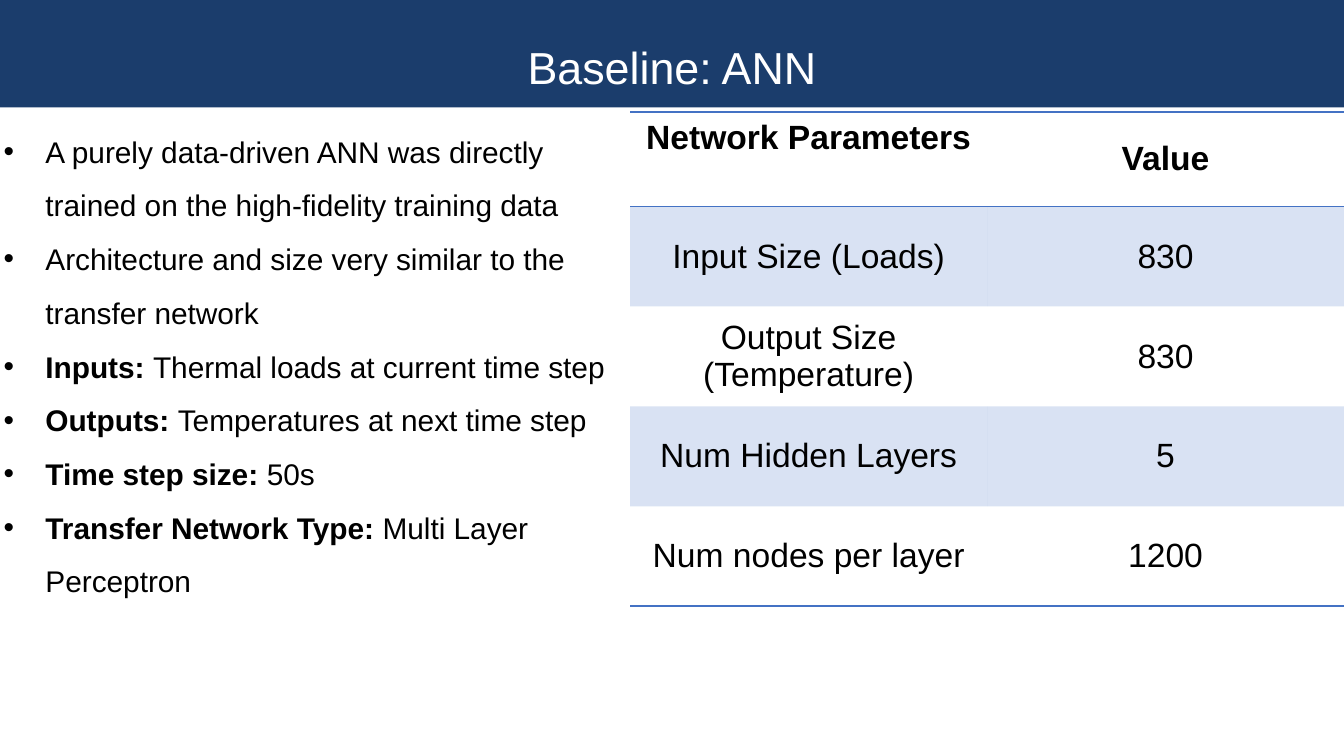
from dataclasses import dataclass
from lxml.etree import SubElement
from pptx import Presentation
from pptx.dml.color import RGBColor as Rgb
from pptx.enum.shapes import MSO_SHAPE as Shape
from pptx.enum.text import MSO_ANCHOR as Anchor, PP_ALIGN as Align
from pptx.oxml.ns import qn
from pptx.util import Cm, Pt


@dataclass(frozen=True)
class Theme:
    face: str = "Arial"
    navy: str = "1B3D6C"
    blue: str = "4472C4"
    white: str = "FFFFFF"
    black: str = "000000"
    head: int = 24
    cell: int = 18
    body: int = 16
    tint: int = 20


THEME = Theme()
NO_STYLE = "{2D5ABB26-0587-4C30-8999-92F81FD0307C}"

POINTS = [
    ("", "A purely data-driven ANN was directly trained on the high-fidelity training data"),
    ("", "Architecture and size very similar to the transfer network"),
    ("Inputs: ", "Thermal loads at current time step"),
    ("Outputs: ", "Temperatures at next time step"),
    ("Time step size: ", "50s"),
    ("Transfer Network Type: ", "Multi Layer Perceptron"),
]

ROWS = [
    ("Network Parameters", "Value"),
    ("Input Size (Loads)", "830"),
    ("Output Size (Temperature)", "830"),
    ("Num Hidden Layers", "5"),
    ("Num nodes per layer", "1200"),
]


def style(para, size, color):
    font = para.font
    font.name, font.size = THEME.face, Pt(size)
    font.color.rgb = Rgb.from_string(color)


def add_title(slide, box, text):
    bar = slide.shapes.add_shape(Shape.RECTANGLE, *box)
    bar.shadow.inherit = False
    bar.fill.solid()
    bar.fill.fore_color.rgb = Rgb.from_string(THEME.navy)
    bar.line.fill.background()
    bar.text_frame.vertical_anchor = Anchor.MIDDLE
    para = bar.text_frame.paragraphs[0]
    para.text, para.alignment, para.line_spacing = text, Align.CENTER, 1.5
    style(para, THEME.head, THEME.white)


def add_points(slide, box, points):
    frame = slide.shapes.add_textbox(*box).text_frame
    frame.word_wrap = True
    for i, (label, text) in enumerate(points):
        para = frame.add_paragraph() if i else frame.paragraphs[0]
        props = para._p.get_or_add_pPr()
        props.set("marL", str(Cm(0.79)))
        props.set("indent", str(-Cm(0.79)))
        para.line_spacing = 1.5
        SubElement(props, qn("a:buFont"), typeface=THEME.face)
        SubElement(props, qn("a:buChar"), char="•")
        style(para, THEME.body, THEME.black)
        if label:
            run = para.add_run()
            run.text, run.font.bold = label, True
        para.add_run().text = text


def add_rule(cell, side):
    line = SubElement(cell._tc.get_or_add_tcPr(), qn(f"a:ln{side}"), w=str(Pt(1)))
    fill = SubElement(line, qn("a:solidFill"))
    SubElement(fill, qn("a:srgbClr"), val=THEME.blue)


def fill_cell(cell, shaded):
    if not shaded:
        cell.fill.background()
        return
    cell.fill.solid()
    cell.fill.fore_color.rgb = Rgb.from_string(THEME.blue)
    color = cell._tc.tcPr.find(f".//{qn('a:srgbClr')}")
    SubElement(color, qn("a:alpha"), val=str(THEME.tint * 1000))


def add_grid(slide, box, rows, top):
    grid = slide.shapes.add_table(len(rows), len(rows[0]), *box).table
    grid.first_row = grid.horz_banding = False
    grid._tbl.tblPr.find(qn("a:tableStyleId")).text = NO_STYLE
    last = len(rows) - 1
    for r, row in enumerate(rows):
        grid.rows[r].height = (box[3] - top) // last if r else top
        for c, text in enumerate(row):
            cell = grid.cell(r, c)
            if r == 0:
                add_rule(cell, "T")
            if r in (0, last):
                add_rule(cell, "B")
            fill_cell(cell, r % 2 == 1)
            cell.vertical_anchor = Anchor.MIDDLE if r or c else Anchor.TOP
            para = cell.text_frame.paragraphs[0]
            para.text, para.alignment = text, Align.CENTER
            style(para, THEME.cell, THEME.black)
            para.font.bold = r == 0


def main():
    deck = Presentation()
    deck.slide_width, deck.slide_height = Cm(25.4), Cm(14.29)
    slide = deck.slides.add_slide(deck.slide_layouts[6])
    add_title(slide, (0, Cm(-0.03), deck.slide_width, Cm(2.06)), "Baseline: ANN")
    left = Cm(11.91)
    add_grid(slide, (left, Cm(2.12), deck.slide_width - left, Cm(9.34)), ROWS, Cm(1.78))
    add_points(slide, (Cm(-0.18), Cm(2.06), Cm(11.91), Cm(9.37)), POINTS)
    deck.save("out.pptx")


if __name__ == "__main__":
    main()
